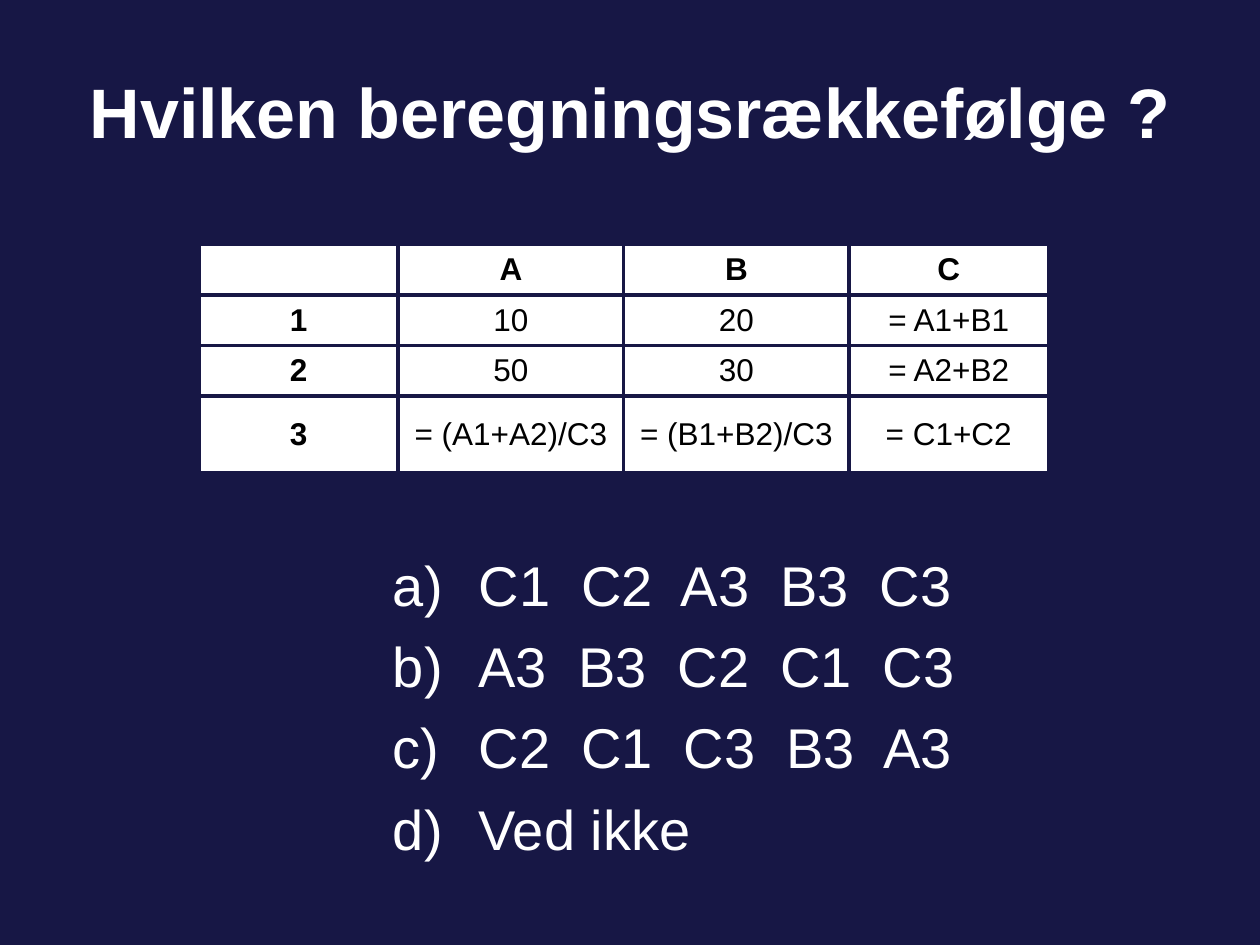
from lxml.etree import SubElement
from pptx import Presentation
from pptx.dml.color import RGBColor
from pptx.enum.text import MSO_ANCHOR, PP_ALIGN
from pptx.oxml.ns import qn
from pptx.util import Inches, Pt

NAVY, WHITE, BLACK = "171745", "FFFFFF", "000000"
TITLE = "Hvilken beregningsrækkefølge ?"
ROWS = [
    ["", "A", "B", "C"],
    ["1", "10", "20", "= A1+B1"],
    ["2", "50", "30", "= A2+B2"],
    ["3", "= (A1+A2)/C3", "= (B1+B2)/C3", "= C1+C2"],
]
WIDTHS = [1.58, 1.79, 1.79, 1.58]
HEIGHTS = [0.4, 0.4, 0.4, 0.61]
ANSWERS = ["C1  C2  A3  B3  C3", "A3  B3  C2  C1  C3", "C2  C1  C3  B3  A3", "Ved ikke"]


def paint(fill, color):
    fill.solid()
    fill.fore_color.rgb = RGBColor.from_string(color)


def style(para, size, color, bold=False):
    font = para.font
    font.name, font.size, font.bold = "Arial", Pt(size), bold
    paint(font.fill, color)


def add_box(slide, left, top, width, height):
    box = slide.shapes.add_textbox(Inches(left), Inches(top), Inches(width), Inches(height))
    box.text_frame.word_wrap = True
    return box.text_frame


def add_title(slide):
    frame = add_box(slide, 0, 0.17, 10, 1.42)
    frame.vertical_anchor = MSO_ANCHOR.MIDDLE
    para = frame.paragraphs[0]
    para.text = TITLE
    para.alignment = PP_ALIGN.CENTER
    style(para, 40, WHITE, True)


def add_list(slide):
    frame = add_box(slide, 3.02, 4.32, 5.29, 2.67)
    frame.text = "\n".join(ANSWERS)
    for para in frame.paragraphs:
        style(para, 32, WHITE)
        para.space_before = Pt(8)
        props = para._p.get_or_add_pPr()
        props.set("marL", str(Inches(0.68)))
        props.set("indent", str(-Inches(0.68)))
        mark = SubElement(props, qn("a:buAutoNum"), type="alphaLcParenR")
        props.find(qn("a:spcBef")).addnext(mark)


def add_edges(cell):
    props = cell._tc.get_or_add_tcPr()
    for spot, side in enumerate(["lnL", "lnR", "lnT", "lnB"]):
        line = SubElement(props, qn("a:" + side), w=str(Pt(2.25)))
        fill = SubElement(line, qn("a:solidFill"))
        SubElement(fill, qn("a:srgbClr"), val=NAVY)
        props.insert(spot, line)


def add_sheet(slide):
    table = slide.shapes.add_table(
        len(ROWS), len(WIDTHS), Inches(1.58), Inches(1.94),
        Inches(sum(WIDTHS)), Inches(sum(HEIGHTS))).table
    for col, width in zip(table.columns, WIDTHS):
        col.width = Inches(width)
    for r, (row, height) in enumerate(zip(ROWS, HEIGHTS)):
        table.rows[r].height = Inches(height)
        for c, text in enumerate(row):
            cell = table.cell(r, c)
            cell.text = text
            cell.vertical_anchor = MSO_ANCHOR.MIDDLE
            paint(cell.fill, WHITE)
            add_edges(cell)
            para = cell.text_frame.paragraphs[0]
            para.alignment = PP_ALIGN.CENTER
            style(para, 18, BLACK, r == 0 or c == 0)


def main():
    deck = Presentation()
    deck.slide_width, deck.slide_height = Inches(10), Inches(7.5)
    slide = deck.slides.add_slide(deck.slide_layouts[6])
    paint(slide.background.fill, NAVY)
    add_list(slide)
    add_title(slide)
    add_sheet(slide)
    deck.save("out.pptx")


if __name__ == "__main__":
    main()
